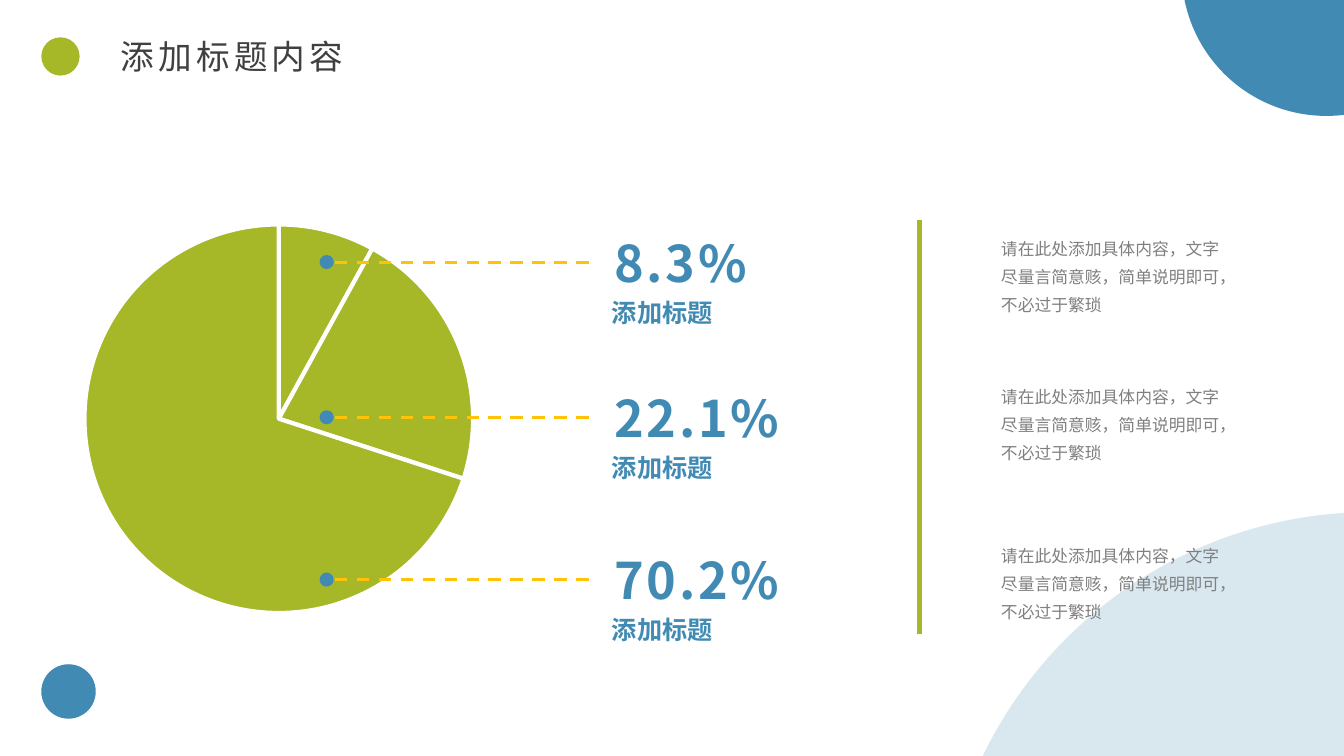
from dataclasses import dataclass

from lxml.etree import SubElement
from pptx import Presentation
from pptx.chart.data import CategoryChartData
from pptx.dml.color import RGBColor
from pptx.enum.chart import XL_CHART_TYPE as ChartType
from pptx.enum.dml import MSO_LINE as Dash
from pptx.enum.shapes import MSO_CONNECTOR as Connector, MSO_SHAPE as Shape
from pptx.enum.text import MSO_AUTO_SIZE as AutoSize, PP_ALIGN as Align
from pptx.oxml import parse_xml
from pptx.oxml.ns import nsdecls, qn
from pptx.util import Inches, Pt

COLORS = {
    "blue": "418AB3",
    "green": "A6B727",
    "yellow": "FEC306",
    "white": "FFFFFF",
    "black": "000000",
    "title": "404040",
    "body": "808080",
}
FONT = "Noto Sans CJK SC"
LABEL = "添加标题"
DETAIL = "请在此处添加具体内容，文字尽量言简意赅，简单说明即可，不必过于繁琐"
DOT_SIZE = 0.14
DOT_LEFT = 3.17


@dataclass(frozen=True)
class Circle:
    left: float
    top: float
    size: float
    color: str
    alpha: int = 100
    shape: Shape = Shape.FLOWCHART_CONNECTOR


@dataclass(frozen=True)
class Share:
    percent: str
    value: int
    center: float
    detail_top: float


DECORATIONS = (
    Circle(9.32, 5.08, 8.57, "blue", alpha=20),
    Circle(11.72, -1.72, 2.87, "blue"),
    Circle(0.41, 6.59, 0.54, "blue"),
    Circle(0.41, 0.37, 0.38, "green"),
)
SHARES = (
    Share("8.3%", 8, 2.6, 2.24),
    Share("22.1%", 22, 4.14, 3.71),
    Share("70.2%", 70, 5.75, 5.29),
)


def rgb(name: str) -> RGBColor:
    return RGBColor.from_string(COLORS[name])


def add_circle(slide, circle: Circle) -> None:
    disc = slide.shapes.add_shape(
        circle.shape, Inches(circle.left), Inches(circle.top),
        Inches(circle.size), Inches(circle.size))
    disc.shadow.inherit = False
    disc.fill.solid()
    disc.fill.fore_color.rgb = rgb(circle.color)
    disc.line.fill.background()
    if circle.alpha < 100:
        tint = disc.fill._xPr.find(".//" + qn("a:srgbClr"))
        SubElement(tint, qn("a:alpha")).set("val", str(circle.alpha * 1000))


def add_line(slide, start: tuple[float, float], end: tuple[float, float],
             color: str, width: float, dash: Dash | None = None) -> None:
    rule = slide.shapes.add_connector(
        Connector.STRAIGHT, *(Inches(length) for length in start + end))
    rule.line.color.rgb = rgb(color)
    rule.line.width = Pt(width)
    if dash is not None:
        rule.line.dash_style = dash
    SubElement(rule._element.spPr, qn("a:effectLst"))


def add_text(slide, text: str, left: float, top: float, width: float,
             height: float, *, size: float, color: str, font: str = FONT,
             bold: bool = False, spacing: float = 0, align: Align = Align.LEFT,
             line_spacing: float | None = None, inset: bool = True) -> None:
    frame = slide.shapes.add_textbox(
        Inches(left), Inches(top), Inches(width), Inches(height)).text_frame
    frame.word_wrap = True
    frame.auto_size = AutoSize.SHAPE_TO_FIT_TEXT
    if not inset:
        frame.margin_left = frame.margin_right = Inches(0)
        frame.margin_top = frame.margin_bottom = Inches(0)
    paragraph = frame.paragraphs[0]
    paragraph.alignment = align
    if line_spacing is not None:
        paragraph.line_spacing = Pt(line_spacing)
    run = paragraph.add_run()
    run.text = text
    run.font.size = Pt(size)
    run.font.bold = bold
    run.font.color.rgb = rgb(color)
    run.font.name = font
    properties = run._r.get_or_add_rPr()
    SubElement(properties, qn("a:ea")).set("typeface", font)
    if spacing:
        properties.set("spc", str(round(spacing * 100)))


def add_pie(slide, shares: tuple[Share, ...]) -> None:
    data = CategoryChartData()
    data.categories = [str(number) for number in range(1, len(shares) + 1)]
    data.add_series("Series 1", [share.value for share in shares])
    pie = slide.shapes.add_chart(
        ChartType.PIE, Inches(0.67), Inches(2.03), Inches(4.19), Inches(4.25),
        data).chart
    pie.has_legend = False
    pie.has_title = False
    pie.font.name = FONT
    pie.font.size = Pt(10)
    pie.font.color.rgb = rgb("black")
    plot = pie.plots[0]
    plot.vary_by_categories = False
    for index in range(len(shares)):
        slice_format = plot.series[0].points[index].format
        slice_format.fill.solid()
        slice_format.fill.fore_color.rgb = rgb("green")
        slice_format.line.color.rgb = rgb("white")
        slice_format.line.width = Pt(3)
    area = pie._chartSpace.find(".//" + qn("c:plotArea"))
    for layout in area.findall(qn("c:layout")):
        area.remove(layout)
    area.insert(0, parse_xml(
        f'<c:layout {nsdecls("c")}><c:manualLayout>'
        '<c:layoutTarget val="inner"/>'
        '<c:xMode val="edge"/><c:yMode val="edge"/>'
        '<c:x val="0.04"/><c:y val="0.04"/>'
        '<c:w val="0.92"/><c:h val="0.92"/>'
        '</c:manualLayout></c:layout>'))


def add_share(slide, share: Share) -> None:
    add_circle(slide, Circle(DOT_LEFT, share.center - DOT_SIZE / 2, DOT_SIZE,
                             "blue", shape=Shape.OVAL))
    add_line(slide, (5.84, share.center), (3.32, share.center),
             "yellow", 2.25, Dash.DASH)
    add_text(slide, share.percent, 6.09, share.center - 0.3, 2.52, 0.6,
             size=36, color="blue", bold=True, spacing=2, inset=False)
    add_text(slide, LABEL, 5.97, share.center + 0.3, 1.76, 0.4,
             size=18, color="blue", bold=True, align=Align.JUSTIFY)
    add_text(slide, DETAIL, 9.83, share.detail_top, 2.47, 0.93,
             size=12, color="body", line_spacing=20)


def main() -> None:
    deck = Presentation()
    deck.slide_width = Inches(13.33)
    deck.slide_height = Inches(7.5)
    slide = deck.slides.add_slide(deck.slide_layouts[6])
    for circle in DECORATIONS:
        add_circle(slide, circle)
    add_text(slide, "添加标题内容", 1.1, 0.31, 2.56, 0.5, size=24,
             color="title", font="Arial", spacing=3, align=Align.JUSTIFY)
    add_pie(slide, SHARES)
    for share in SHARES:
        add_share(slide, share)
    add_line(slide, (9.12, 2.18), (9.12, 6.29), "green", 3)
    deck.save("out.pptx")


if __name__ == "__main__":
    main()
